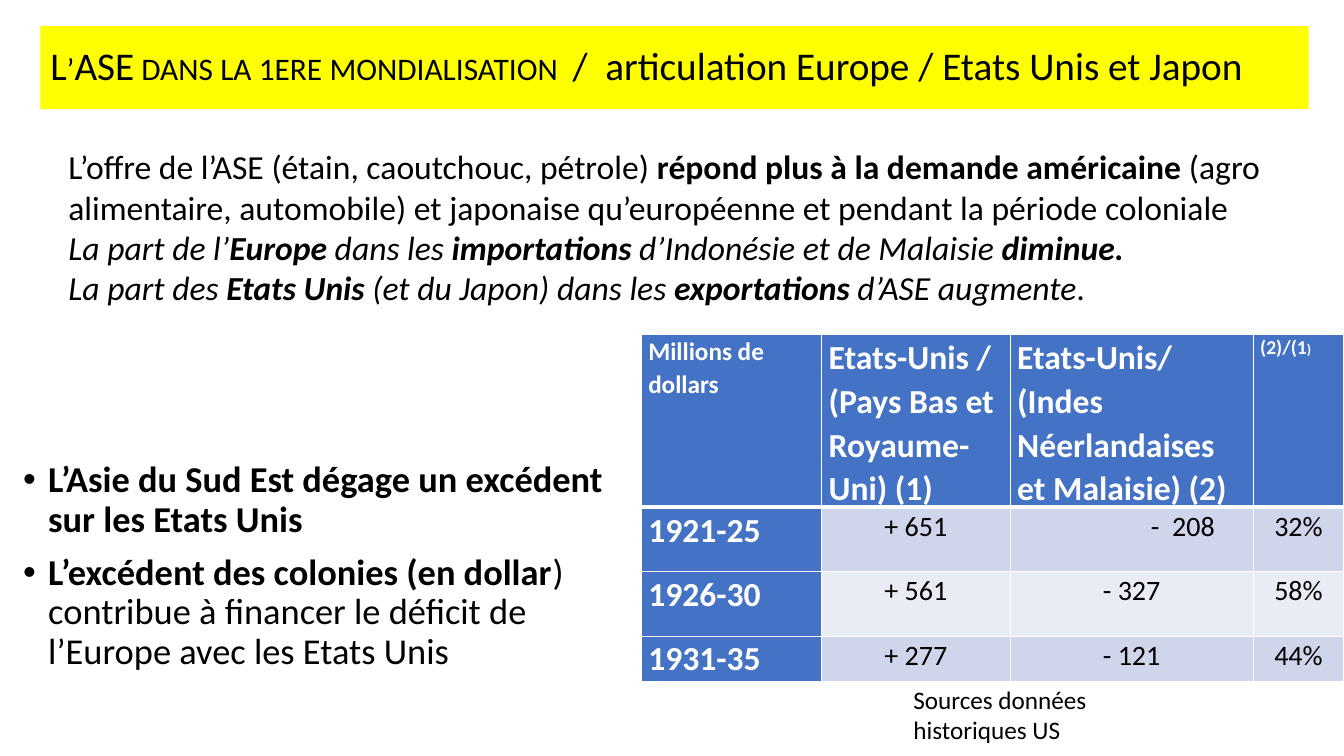
from lxml import etree
from pptx import Presentation
from pptx.dml.color import RGBColor
from pptx.enum.shapes import MSO_SHAPE as Shape
from pptx.enum.text import MSO_ANCHOR as Anchor, PP_ALIGN as Align
from pptx.oxml import parse_xml
from pptx.oxml.ns import nsdecls, qn
from pptx.util import Inches, Pt

# Content: a paragraph is a list of (text, style) runs; b bold, i italic, c small caps
TITLE = [[("L’ASE dans la 1ere mondialisation  ", "c"),
          ("/  articulation Europe / Etats Unis et Japon", "")]]
INTRO = [
    [("L’offre de l’ASE (étain, caoutchouc, pétrole) ", ""),
     ("répond plus à la demande américaine ", "b"),
     ("(agro alimentaire, automobile) et japonaise qu’européenne "
      "et pendant la période coloniale", "")],
    [("La part de l’", "i"), ("Europe", "bi"), (" dans les ", "i"),
     ("importations", "bi"), (" d’Indonésie et de Malaisie ", "i"),
     ("diminue.", "bi")],
    [("La part des ", "i"), ("Etats Unis ", "bi"),
     ("(et du Japon) dans les ", "i"), ("exportations ", "bi"),
     ("d’ASE augmente", "i"), (".", "")],
]
POINTS = [
    [("L’Asie du Sud Est dégage un excédent sur les Etats Unis", "b")],
    [("L’excédent des colonies (en dollar", "b"),
     (") contribue à financer le déficit de l’Europe avec les Etats Unis", "")],
]
SOURCE = [[("Sources données historiques US", "")]]

# Header cells: runs of (text, style, size)
HEADER = [
    [("Millions de dollars", "b", 18)],
    [("Etats-Unis /  (Pays Bas et Royaume-Uni) (1)", "b", 24)],
    [("Etats-Unis/ (Indes Néerlandaises et Malaisie) (2)", "b", 24)],
    [("(2)/(1", "b", 14), (")", "b", 10)],
]
ROWS = [
    ("1921-25", "+ 651", "-  208", "32%"),
    ("1926-30", "+ 561", "- 327", "58%"),
    ("1931-35", "+ 277", "- 121", "44%"),
]
COL_WIDTHS = [1.79, 1.87, 2.41, 0.9]
ROW_HEIGHTS = [1.71, 0.64, 0.64, 0.45]
RIGHT_CELL = (1, 2)  # the one figure set to the right

COLORS = {"black": "000000", "white": "FFFFFF", "title": "FFFF00",
          "head": "4472C4", "odd": "CFD5EA", "even": "E9EBF5"}
FONT = "Calibri"


def rgb(name):
    return RGBColor.from_string(COLORS[name])


def write(tf, paragraphs, size=24, color="black", align=Align.LEFT,
          spacing=1.0, before=0, bullet=False):
    tf.word_wrap = True
    for n, runs in enumerate(paragraphs):
        p = tf.paragraphs[0] if n == 0 else tf.add_paragraph()
        p.alignment, p.line_spacing = align, spacing
        p.space_before = Pt(before if n else 0)
        if bullet:
            pPr = p._p.get_or_add_pPr()
            pPr.set("marL", str(Inches(0.25)))
            pPr.set("indent", str(-Inches(0.25)))
            etree.SubElement(pPr, qn("a:buFont")).set("typeface", "Arial")
            etree.SubElement(pPr, qn("a:buChar")).set("char", "•")
        for text, style, *own_size in runs:
            r = p.add_run()
            r.text = text
            r.font.name = FONT
            r.font.size = Pt(own_size[0] if own_size else size)
            r.font.bold, r.font.italic = "b" in style, "i" in style
            r.font.color.rgb = rgb(color)
            if "c" in style:
                r.font._element.set("cap", "small")


def add_text(slide, box, paragraphs, **fmt):
    sp = slide.shapes.add_textbox(*map(Inches, box))
    write(sp.text_frame, paragraphs, **fmt)


def set_borders(cell, top, bottom):
    tcPr = cell._tc.get_or_add_tcPr()
    for n, (side, width) in enumerate(
            [("L", 1), ("R", 1), ("T", top), ("B", bottom)]):
        tcPr.insert(n, parse_xml(
            f'<a:ln{side} {nsdecls("a")} w="{Pt(width)}"><a:solidFill>'
            f'<a:srgbClr val="{COLORS["white"]}"/></a:solidFill></a:ln{side}>'))


def add_trade_table(slide, left, top):
    frame = slide.shapes.add_table(
        len(ROW_HEIGHTS), len(COL_WIDTHS), Inches(left), Inches(top),
        Inches(sum(COL_WIDTHS)), Inches(sum(ROW_HEIGHTS)))
    table = frame.table
    for col, width in zip(table.columns, COL_WIDTHS):
        col.width = Inches(width)
    for row, height in zip(table.rows, ROW_HEIGHTS):
        row.height = Inches(height)

    body = [[[(text, "" if j else "b")] for j, text in enumerate(row)]
            for row in ROWS]
    for i, row in enumerate([HEADER] + body):
        for j, runs in enumerate(row):
            cell = table.cell(i, j)
            heading = i == 0 or j == 0
            to_right = (i, j) == RIGHT_CELL
            cell.margin_left = Inches(0.07)
            cell.margin_right = Inches(0.38 if to_right else 0.07)
            cell.margin_top = cell.margin_bottom = 0
            cell.fill.solid()
            cell.fill.fore_color.rgb = rgb(
                "head" if heading else "odd" if i % 2 else "even")
            set_borders(cell, 3 if i == 1 else 1, 3 if i == 0 else 1)
            align = (Align.LEFT if heading else
                     Align.RIGHT if to_right else Align.CENTER)
            write(cell.text_frame, [runs], size=24 if heading else 20,
                  color="white" if heading else "black",
                  align=align, spacing=1.07)


def main():
    prs = Presentation()
    prs.slide_width, prs.slide_height = Inches(13.33), Inches(7.5)
    s = prs.slides.add_slide(prs.slide_layouts[6])

    # Title band
    band = s.shapes.add_shape(
        Shape.RECTANGLE, *map(Inches, (0.4, 0.26, 12.58, 0.82)))
    band.shadow.inherit = False
    band.fill.solid()
    band.fill.fore_color.rgb = rgb("title")
    band.line.fill.background()
    band.text_frame.vertical_anchor = Anchor.MIDDLE
    write(band.text_frame, TITLE, size=28, spacing=0.9)

    # Bullets, introduction, table and its source
    add_text(s, (0.13, 4.53, 6.21, 2.34), POINTS, size=26,
             spacing=0.9, before=10, bullet=True)
    add_text(s, (0.58, 1.4, 13.05, 2.12), INTRO)
    add_trade_table(s, 6.36, 3.32)
    add_text(s, (8.96, 6.74, 3.09, 0.71), SOURCE, size=18)

    prs.save("out.pptx")


if __name__ == "__main__":
    main()
